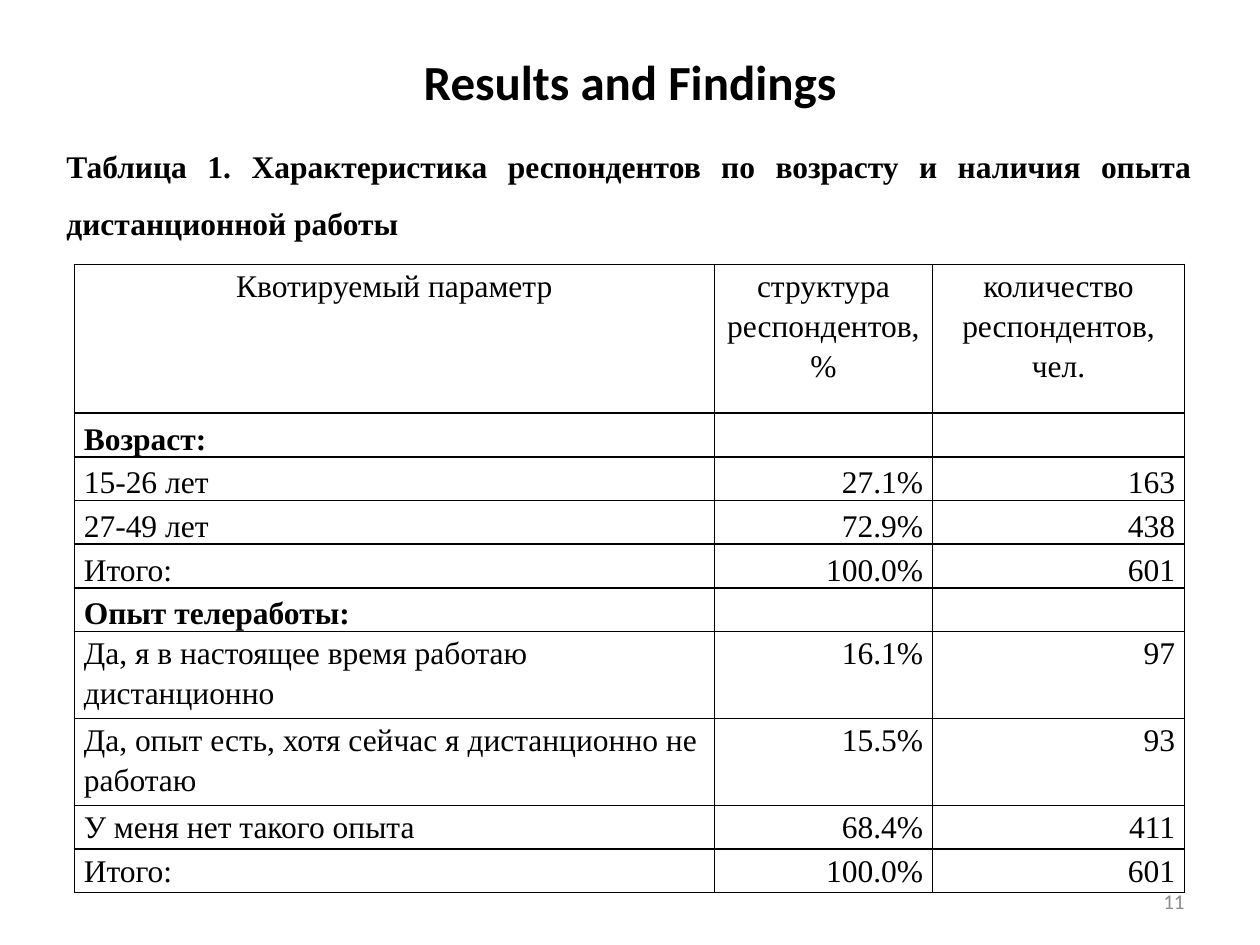
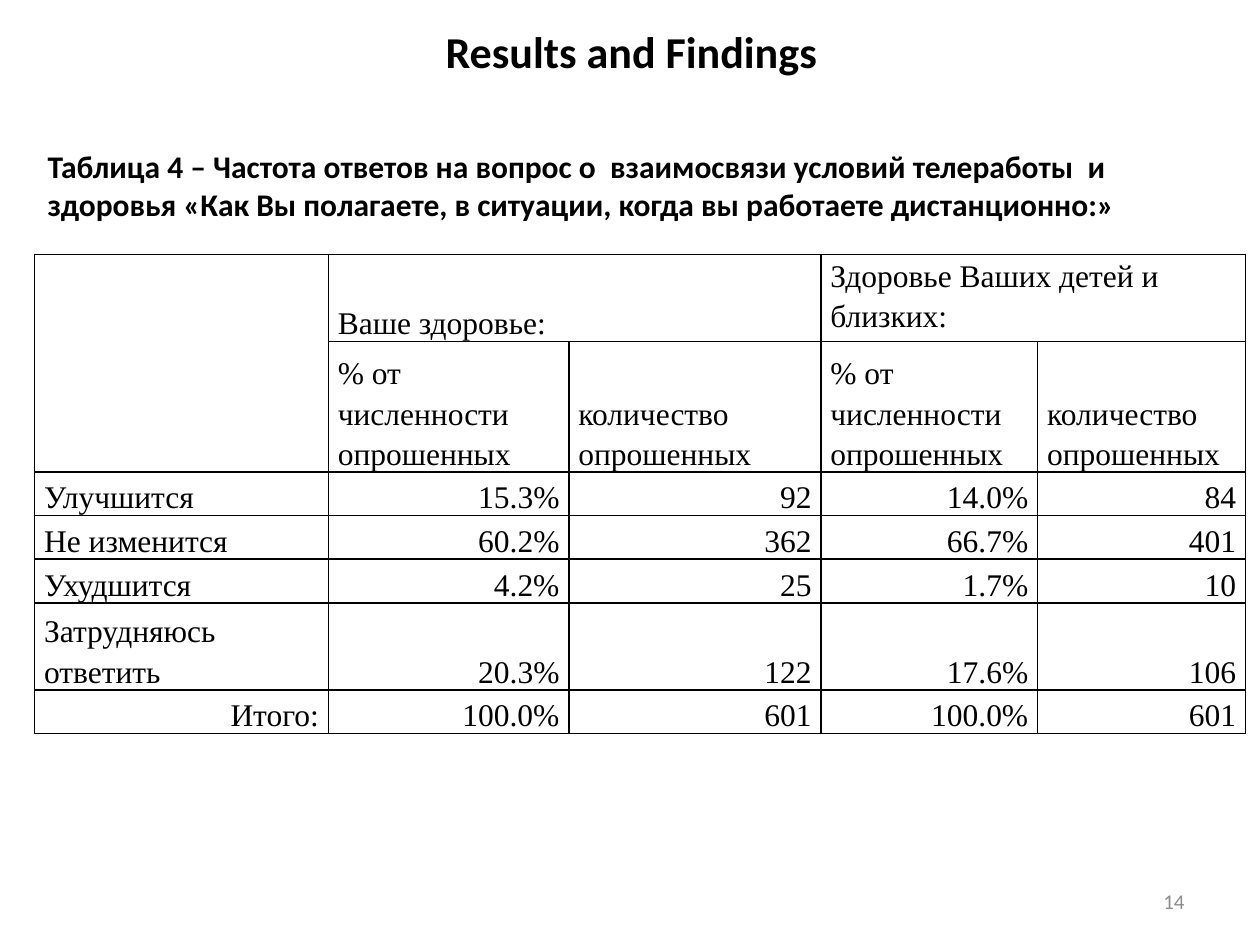
from pptx import Presentation
from pptx import util as u
from pptx.dml import color
from pptx.enum import text
from pptx.oxml import parse_xml
from pptx.oxml.ns import nsdecls

COLOURS = {"ink": "000000", "paper": "FFFFFF", "number": "8C8C8C"}
SANS, SERIF = "Calibri", "Times New Roman"
LEFT, CENTRE, RIGHT, JUSTIFY = (text.PP_ALIGN.LEFT, text.PP_ALIGN.CENTER,
                                text.PP_ALIGN.RIGHT, text.PP_ALIGN.JUSTIFY)
TOP, MIDDLE, BOTTOM = (text.MSO_ANCHOR.TOP, text.MSO_ANCHOR.MIDDLE,
                       text.MSO_ANCHOR.BOTTOM)
# Row heights for one, two and three lines of text
ONE, TWO, THREE = 0.88, 1.75, 2.63


def rgb(name):
    return color.RGBColor.from_string(COLOURS[name])


def set_all(target, values):
    for name, value in values.items():
        setattr(target, name, value)


def write(frame, words, font, para_format, ink="ink"):
    para = frame.paragraphs[0]
    set_all(para, para_format)
    span = para.add_run()
    span.text = words
    set_all(span.font, font)
    span.font.color.rgb = rgb(ink)


def place(shape, box):
    set_all(shape, dict(zip(("left", "top", "width", "height"), map(u.Cm, box))))


def add_title(page, box, size, bottom_margin=0.13):
    title = page.shapes.title
    place(title, box)
    set_all(title.text_frame, {"vertical_anchor": MIDDLE, "word_wrap": True,
                               "auto_size": text.MSO_AUTO_SIZE.NONE,
                               "margin_bottom": u.Cm(bottom_margin)})
    write(title.text_frame, "Results and Findings",
          {"name": SANS, "size": u.Pt(size), "bold": True}, {"alignment": CENTRE})


def add_text(page, box, words, font, para_format, anchor=TOP, ink="ink"):
    frame = page.shapes.add_textbox(*map(u.Cm, box)).text_frame
    set_all(frame, {"word_wrap": True, "vertical_anchor": anchor})
    write(frame, words, font, para_format, ink)


def add_caption(page, box, words, font_name, para_format):
    add_text(page, box, words,
             {"name": font_name, "size": u.Pt(18), "bold": True}, para_format)


def add_page_number(page, number):
    add_text(page, (18.21, 17.65, 5.92, 1.02), number,
             {"name": SANS, "size": u.Pt(12)}, {"alignment": RIGHT}, MIDDLE, "number")


def add_borders(cell):
    properties = cell._tc.get_or_add_tcPr()
    for index, side in enumerate(("lnL", "lnR", "lnT", "lnB")):
        properties.insert(index, parse_xml(
            f'<a:{side} {nsdecls("a")} w="12700"><a:solidFill>'
            f'<a:srgbClr val="{COLOURS["ink"]}"/></a:solidFill></a:{side}>'))


def add_grid(page, left, top, widths, rows, merges=()):
    """Each row is (height, anchor, first alignment, other alignment, texts)."""
    box = (left, top, sum(widths), sum(row[0] for row in rows))
    grid = page.shapes.add_table(len(rows), len(widths), *map(u.Cm, box)).table
    set_all(grid, {"first_row": False, "horz_banding": False})
    for column, width in zip(grid.columns, widths):
        column.width = u.Cm(width)
    for r, (height, anchor, first, other, texts) in enumerate(rows):
        grid.rows[r].height = u.Cm(height)
        is_group = len(texts) == 1
        for c in range(len(widths)):
            cell = grid.cell(r, c)
            set_all(cell, {"vertical_anchor": anchor,
                           "margin_left": u.Cm(0.19), "margin_right": u.Cm(0.19),
                           "margin_top": 0, "margin_bottom": 0})
            cell.fill.solid()
            cell.fill.fore_color.rgb = rgb("paper")
            add_borders(cell)
            if c < len(texts) and texts[c]:
                write(cell.text_frame, texts[c],
                      {"name": SERIF, "size": u.Pt(18), "bold": is_group},
                      {"alignment": other if c else first, "line_spacing": 1.15})
    for start, end in merges:
        grid.cell(*start).merge(grid.cell(*end))
    return grid


def respondents_page(page):
    add_title(page, (1.27, 0.76, 22.86, 1.75), 28)
    add_page_number(page, "11")
    add_caption(page, (1.09, 2.46, 23.19, 2.44),
                "Таблица 1. Характеристика респондентов по возрасту и наличия "
                "опыта дистанционной работы",
                SERIF, {"alignment": JUSTIFY, "line_spacing": 1.5})
    low = (ONE, BOTTOM, LEFT, RIGHT)
    high = (ONE, TOP, LEFT, RIGHT)
    tall = (TWO, TOP, LEFT, RIGHT)
    add_grid(page, 1.5, 5.33, (12.9, 4.4, 5.08), [
        (3, TOP, CENTRE, CENTRE, ("Квотируемый параметр", "структура респондентов, %",
                                  "количество респондентов, чел.")),
        (*low, ("Возраст:",)),
        (*low, ("15-26 лет", "27.1%", "163")),
        (*low, ("27-49 лет", "72.9%", "438")),
        (*low, ("Итого:", "100.0%", "601")),
        (*low, ("Опыт телеработы:",)),
        (*tall, ("Да, я в настоящее время работаю дистанционно", "16.1%", "97")),
        (*tall, ("Да, опыт есть, хотя сейчас я дистанционно не работаю", "15.5%", "93")),
        (*high, ("У меня нет такого опыта", "68.4%", "411")),
        (*high, ("Итого:", "100.0%", "601")),
    ])


def health_page(page):
    add_title(page, (1.3, 0.74, 22.86, 2.21), 25.2, bottom_margin=1.75)
    add_page_number(page, "14")
    add_caption(page, (0.71, 2.84, 23.8, 1.8),
                "Таблица 4 – Частота ответов на вопрос о  взаимосвязи условий "
                "телеработы  и здоровья «Как Вы полагаете, в ситуации, когда вы "
                "работаете дистанционно:»", SANS, {"alignment": LEFT})
    measures = ("% от численности опрошенных", "количество опрошенных")
    answer = (ONE, BOTTOM, LEFT, RIGHT)
    grid = add_grid(page, 0.7, 5.13, (5.92, 4.85, 5.08, 4.37, 4.19), [
        (TWO, BOTTOM, LEFT, LEFT, ("", "Ваше здоровье:", "",
                                   "Здоровье Ваших детей и близких:", "")),
        (THREE, BOTTOM, LEFT, LEFT, ("", *measures * 2)),
        (*answer, ("Улучшится", "15.3%", "92", "14.0%", "84")),
        (*answer, ("Не изменится", "60.2%", "362", "66.7%", "401")),
        (*answer, ("Ухудшится", "4.2%", "25", "1.7%", "10")),
        (TWO, BOTTOM, LEFT, RIGHT,
         ("Затрудняюсь ответить", "20.3%", "122", "17.6%", "106")),
        (ONE, BOTTOM, RIGHT, RIGHT, ("Итого:", "100.0%", "601", "100.0%", "601")),
    ], merges=[((0, 0), (1, 0)), ((0, 1), (0, 2)), ((0, 3), (0, 4))])
    grid.cell(0, 3).vertical_anchor = TOP


def main():
    deck = Presentation()
    set_all(deck, {"slide_width": u.Cm(25.4), "slide_height": u.Cm(19.05)})
    for build in (respondents_page, health_page):
        build(deck.slides.add_slide(deck.slide_layouts[5]))
    deck.save("out.pptx")


if __name__ == "__main__":
    main()
